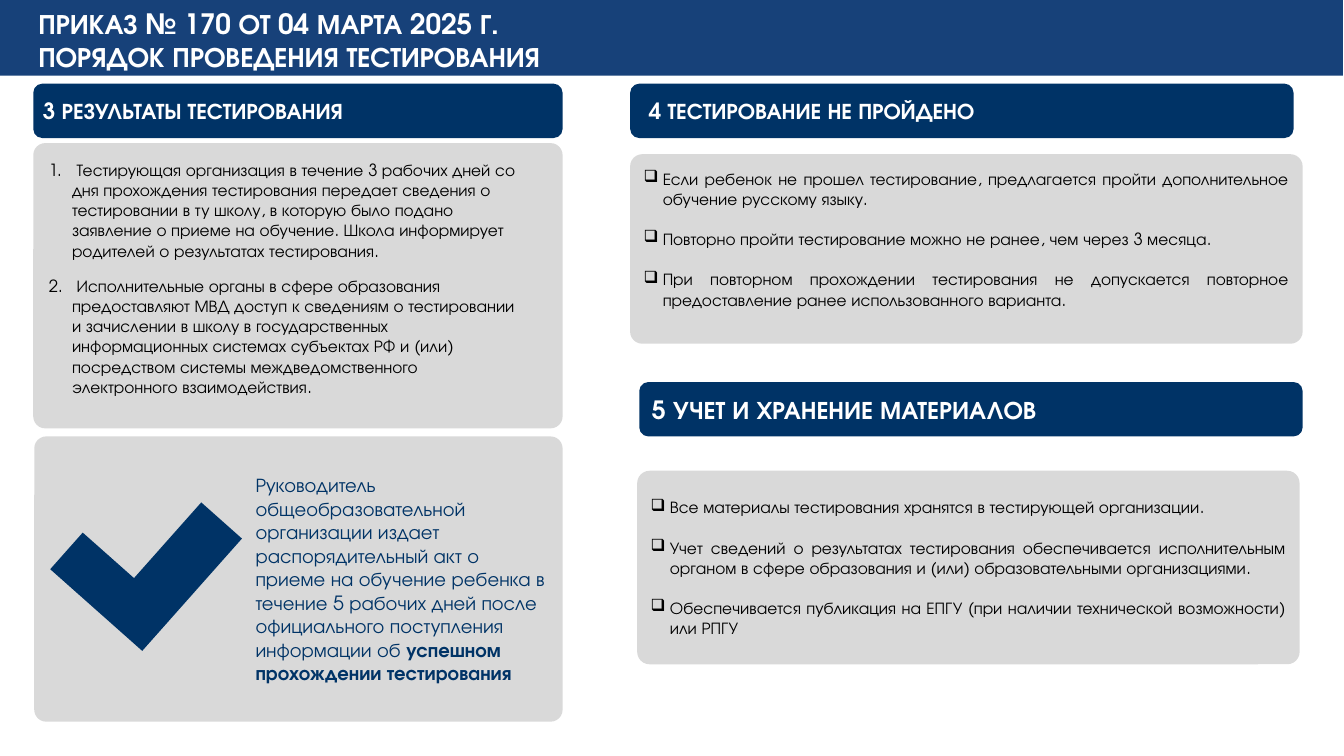
from dataclasses import dataclass

import pptx
import pptx.dml.color
import pptx.enum.shapes
import pptx.enum.text
import pptx.oxml
import pptx.oxml.ns
import pptx.util

Inches, Pt = pptx.util.Inches, pptx.util.Pt
MSO_SHAPE = pptx.enum.shapes.MSO_SHAPE
PP_ALIGN = pptx.enum.text.PP_ALIGN
ANCHOR = pptx.enum.text.MSO_ANCHOR

FONT = "TeX Gyre Adventor"
NAVY, BAND, GREY, WHITE, BLACK = "003366", "174179", "D9D9D9", "FFFFFF", "000000"
NUMBER = '<a:buAutoNum {} type="arabicPeriod"/>'
BOX = '<a:buChar {} char="❑"/>'


@dataclass
class Header:
    left: float
    top: float
    width: float
    text: str
    size: int = 16
    inset: float = 0.1


@dataclass
class Card:
    box: tuple  # left, top, width, height
    radius: float
    paras: list  # each paragraph is a list of (text, bold)
    size: int = 12
    color: str = BLACK
    insets: tuple = (0.1, 0.05, 0.1, 0.05)
    bullet: str = ""
    indent: float = 0
    gap: float = 0
    align: PP_ALIGN = PP_ALIGN.LEFT


HEADERS = [
    Header(0.33, 0.83, 5.25, "3 РЕЗУЛЬТАТЫ ТЕСТИРОВАНИЯ", inset=0.07),
    Header(6.25, 0.83, 6.58, "4 ТЕСТИРОВАНИЕ НЕ ПРОЙДЕНО", inset=0.16),
    Header(6.34, 3.79, 6.58, "5 УЧЕТ И ХРАНЕНИЕ МАТЕРИАЛОВ", size=18),
]

CHECKLIST = dict(bullet=BOX, indent=0.19, gap=14.4, align=PP_ALIGN.JUSTIFY)
CARDS = [
    Card((0.33, 1.42, 5.25, 2.83), 0.042, [
        [(" Тестирующая организация в течение 3 рабочих дней со дня прохождения "
          "тестирования передает сведения о тестировании в ту школу, в которую было "
          "подано заявление о приеме на обучение. Школа информирует родителей о "
          "результатах тестирования.", False)],
        [(" Исполнительные органы в сфере образования предоставляют МВД доступ к "
          "сведениям о тестировании и зачислении в школу в государственных "
          "информационных системах субъектах РФ и (или) посредством системы "
          "междведомственного электронного взаимодействия.", False)],
    ], insets=(0.12, 0.05, 0.37, 0.2), bullet=NUMBER, indent=0.23, gap=10.9),
    Card((0.34, 4.33, 5.24, 2.83), 0.042, [
        [("Руководитель общеобразовательной организации издает распорядительный акт о "
          "приеме на обучение ребенка в течение 5 рабочих дней после официального "
          "поступления информации об ", False),
         ("успешном прохождении тестирования", True)],
    ], size=14, color=NAVY, insets=(2.16, 0.05, 0.1, 0.05)),
    Card((6.25, 1.53, 6.67, 1.88), 0.064, [
        [("Если ребенок не прошел тестирование, предлагается пройти дополнительное "
          "обучение русскому языку.", False)],
        [("Повторно пройти тестирование можно не ранее, чем через 3 месяца.", False)],
        [("При повторном прохождении тестирования не допускается повторное "
          "предоставление ранее использованного варианта.", False)],
    ], insets=(0.1, 0.05, 0.1, 0.25), **CHECKLIST),
    Card((6.32, 4.67, 6.57, 1.92), 0.064, [
        [("Все материалы тестирования хранятся в тестирующей организации.", False)],
        [("Учет сведений о результатах тестирования обеспечивается исполнительным "
          "органом в сфере образования и (или) образовательными организациями.", False)],
        [("Обеспечивается публикация на ЕПГУ (при наличии технической возможности) "
          "или РПГУ", False)],
    ], **CHECKLIST),
]


def rgb(color: str) -> pptx.dml.color.RGBColor:
    return pptx.dml.color.RGBColor.from_string(color)


def add_block(s, kind: MSO_SHAPE, box: tuple, fill: str, *adjustments: float):
    sp = s.shapes.add_shape(kind, *map(Inches, box))
    sp.shadow.inherit = False
    sp.fill.solid()
    sp.fill.fore_color.rgb = rgb(fill)
    sp.line.fill.background()
    for i, value in enumerate(adjustments):
        sp.adjustments[i] = value
    return sp


def set_frame(tf, insets: tuple, anchor: ANCHOR) -> None:
    tf.word_wrap = True
    tf.vertical_anchor = anchor
    tf.margin_left, tf.margin_top, tf.margin_right, tf.margin_bottom = map(Inches, insets)


def add_run(p, text: str, size: int, color: str, bold: bool):
    r = p.add_run()
    r.text = text
    r.font.name, r.font.size, r.font.bold = FONT, Pt(size), bold
    r.font.color.rgb = rgb(color)
    return r


def add_bullet(p, bullet: str, indent: float) -> None:
    pPr = p._p.get_or_add_pPr()
    pPr.set("marL", str(Inches(indent)))
    pPr.set("indent", str(-Inches(indent)))
    pPr.append(pptx.oxml.parse_xml(bullet.format(pptx.oxml.ns.nsdecls("a"))))


def add_header(s, header: Header) -> None:
    box = (header.left, header.top, header.width, 0.54)
    sp = add_block(s, MSO_SHAPE.ROUNDED_RECTANGLE, box, NAVY, 0.167)
    set_frame(sp.text_frame, (header.inset, 0.05, 0.1, 0.05), ANCHOR.MIDDLE)
    p = sp.text_frame.paragraphs[0]
    p.alignment = PP_ALIGN.LEFT
    add_run(p, header.text, header.size, WHITE, True)


def add_card(s, card: Card) -> None:
    sp = add_block(s, MSO_SHAPE.ROUNDED_RECTANGLE, card.box, GREY, card.radius)
    tf = sp.text_frame
    set_frame(tf, card.insets, ANCHOR.MIDDLE)
    for i, runs in enumerate(card.paras):
        p = tf.add_paragraph() if i else tf.paragraphs[0]
        p.alignment = card.align
        if card.bullet:
            add_bullet(p, card.bullet, card.indent)
        if i:
            p.space_before = Pt(card.gap)
        for text, bold in runs:
            add_run(p, text, card.size, card.color, bold)


def add_title(s, *lines: str) -> None:
    add_block(s, MSO_SHAPE.RECTANGLE, (0, 0, 13.32, 0.75), BAND)
    tf = s.shapes.add_textbox(*map(Inches, (0.37, 0.04, 10.96, 0.69))).text_frame
    set_frame(tf, (0.01, 0.02, 0, 0), ANCHOR.TOP)
    p = tf.paragraphs[0]
    for i, line in enumerate(lines):
        if i:
            p.add_line_break()
        r = add_run(p, line, 20, WHITE, True)
        r._r.get_or_add_rPr().set("spc", "-10")


def main() -> None:
    prs = pptx.Presentation()
    prs.slide_width, prs.slide_height = Inches(13.33), Inches(7.5)
    s = prs.slides.add_slide(prs.slide_layouts[6])

    # Title band
    add_title(s, "ПРИКАЗ № 170 ОТ 04 МАРТА 2025 Г.", "ПОРЯДОК ПРОВЕДЕНИЯ ТЕСТИРОВАНИЯ")

    # Sections
    for header in HEADERS:
        add_header(s, header)
    for card in CARDS:
        add_card(s, card)

    # Check mark: a mirrored, rotated corner
    check = add_block(s, MSO_SHAPE.CORNER, (0.84, 4.75, 1.22, 1.49), NAVY, 0.398, 0.443)
    check.rotation = 41.6
    check._element.spPr.get_or_add_xfrm().set("flipH", "1")

    prs.save("out.pptx")


if __name__ == "__main__":
    main()
